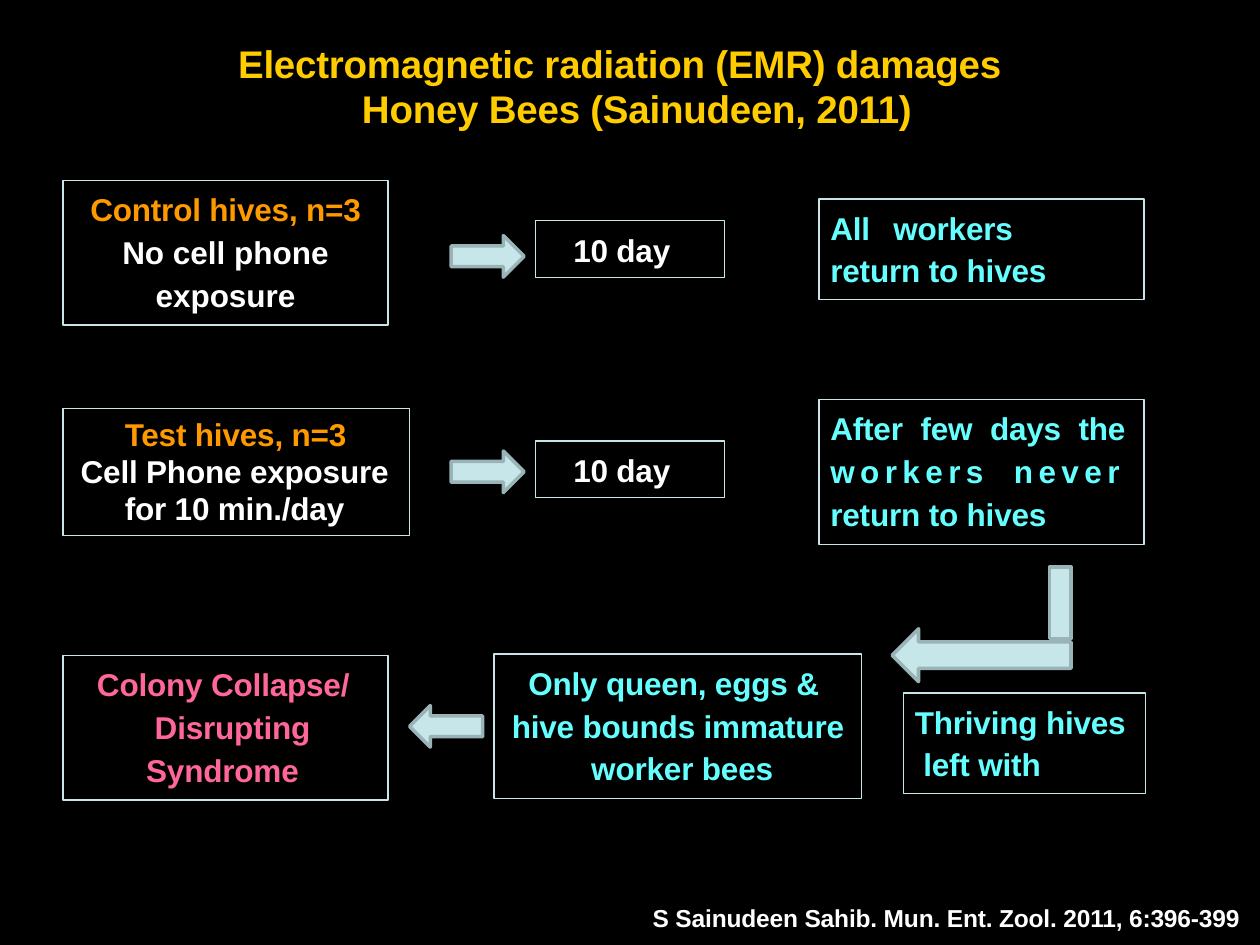
"""Builds a flow slide on honey bee hives exposed to electromagnetic radiation."""
from dataclasses import dataclass

from lxml import etree
from pptx import Presentation
from pptx import util as u
from pptx.dml.color import RGBColor
from pptx.enum import shapes, text
from pptx.oxml.ns import qn

BLACK = RGBColor(0x00, 0x00, 0x00)
WHITE = RGBColor(0xFF, 0xFF, 0xFF)
GOLD = RGBColor(0xFF, 0xCC, 0x00)
ORANGE = RGBColor(0xFF, 0x99, 0x00)
CYAN = RGBColor(0x66, 0xFF, 0xFF)
PINK = RGBColor(0xFF, 0x66, 0x99)
ICE = RGBColor(0xC6, 0xE6, 0xE9)
STEEL = RGBColor(0x9A, 0xB3, 0xB6)

LEFT, CENTER, JUSTIFY = (text.PP_ALIGN.LEFT, text.PP_ALIGN.CENTER,
                         text.PP_ALIGN.JUSTIFY)
KIND = shapes.MSO_SHAPE


@dataclass
class Span:
    words: str
    color: RGBColor
    spacing: float = -0.1


@dataclass
class Para:
    spans: list[Span]
    margin: float = 0
    indent: float = 0
    align: text.PP_ALIGN = LEFT
    leading: float | u.Pt = 1.13
    before: float = 3
    tab: float = 0


@dataclass
class Box:
    at: tuple[float, float, float, float]
    paras: list[Para]
    top: float = 0.04
    right: float = 0


@dataclass
class Block:
    kind: shapes.MSO_SHAPE
    at: tuple[float, float, float, float]


def ten_days(top: float) -> Box:
    """Return the exposure period box at the given height."""
    para = Para([Span("10 day", WHITE)], 0.3, leading=1.0, before=5.9)
    return Box((4.25, top, 1.5, 0.45), [para], 0.08)


BOXES = [
    Box((0.5, 1.43, 2.58, 1.15),
        [Para([Span("Control hives, n=3\v", ORANGE),
               Span("No cell phone\vexposure", WHITE, 0)], align=CENTER)]),
    ten_days(1.75),
    Box((6.5, 1.58, 2.58, 0.8),
        [Para([Span("All\tworkers\vreturn to hives", CYAN)], 0.09,
              leading=1.11, before=3.5, tab=0.61)], 0.05),
    Box((0.5, 3.24, 2.75, 1.01),
        [Para([Span("Test hives, n=3\v", ORANGE), Span("Cell Phone exposure", WHITE)],
              0.14, 0.35, leading=u.Pt(21), before=4.4),
         Para([Span("for 10 min./day", WHITE)], 0.49,
              leading=u.Pt(21.4), before=0)], 0.06),
    ten_days(3.5),
    Box((6.5, 3.17, 2.58, 1.15),
        [Para([Span("After few days the ", CYAN), Span("workers never ", CYAN, 3.1),
               Span("return to hives", CYAN)], 0.09, align=JUSTIFY)], right=0.15),
    Box((7.17, 5.5, 1.92, 0.8),
        [Para([Span("Thriving hives\v left with", CYAN)], 0.09,
              leading=1.11, before=3.5)], 0.05),
    Box((3.92, 5.19, 2.92, 1.15),
        [Para([Span("Only queen, eggs & \vhive bounds immature\v worker bees", CYAN)],
              align=CENTER)]),
    Box((0.5, 5.2, 2.58, 1.15),
        [Para([Span("Colony Collapse/\v Disrupting\vSyndrome", PINK)], 0.66, -0.39)]),
]

BLOCKS = [
    Block(KIND.RIGHT_ARROW, (3.58, 1.87, 0.58, 0.33)),
    Block(KIND.RIGHT_ARROW, (3.58, 3.58, 0.58, 0.33)),
    Block(KIND.RECTANGLE, (8.33, 4.5, 0.17, 0.57)),
    Block(KIND.LEFT_ARROW, (7.08, 4.99, 1.42, 0.42)),
    Block(KIND.LEFT_ARROW, (3.25, 5.6, 0.58, 0.33)),
]


def set_all(target, values: dict) -> None:
    """Set every named attribute on the target."""
    for name, value in values.items():
        setattr(target, name, value)


def write(tf, paras: list[Para], size: float, top: float = 0, right: float = 0) -> None:
    """Fill a text frame with formatted paragraphs."""
    set_all(tf, {"word_wrap": True, "auto_size": text.MSO_AUTO_SIZE.NONE,
                 "vertical_anchor": text.MSO_ANCHOR.TOP,
                 "margin_left": 0, "margin_top": u.Inches(top),
                 "margin_right": u.Inches(right), "margin_bottom": 0})
    for i, para in enumerate(paras):
        p = tf.add_paragraph() if i else tf.paragraphs[0]
        set_all(p, {"alignment": para.align, "line_spacing": para.leading,
                    "space_before": u.Pt(para.before)})
        ppr = p._p.get_or_add_pPr()
        ppr.set("marL", str(u.Inches(para.margin)))
        ppr.set("indent", str(u.Inches(para.indent)))
        if para.tab:
            tabs = etree.SubElement(ppr, qn("a:tabLst"))
            etree.SubElement(tabs, qn("a:tab"), pos=str(u.Inches(para.tab)), algn="l")
        for span in para.spans:
            for n, line in enumerate(span.words.split("\v")):
                if n:
                    p.add_line_break()
                if not line:
                    continue
                r = p.add_run()
                r.text = line
                set_all(r.font, {"name": "Arial", "size": u.Pt(size), "bold": True})
                r.font.color.rgb = span.color
                r._r.get_or_add_rPr().set("spc", str(round(span.spacing * 100)))


def add_block(s, block: Block, fill: RGBColor, line: RGBColor, width: float):
    """Add a filled and outlined preset shape."""
    sp = s.shapes.add_shape(block.kind, *map(u.Inches, block.at))
    sp.shadow.inherit = False
    sp.fill.solid()
    sp.fill.fore_color.rgb = fill
    sp.line.color.rgb = line
    sp.line.width = u.Pt(width)
    return sp


def main() -> None:
    """Build and save the slide."""
    prs = Presentation()
    prs.slide_width, prs.slide_height = u.Inches(10), u.Inches(7.5)
    s = prs.slides.add_slide(prs.slide_layouts[5])
    s.background.fill.solid()
    s.background.fill.fore_color.rgb = BLACK

    title = s.shapes.title
    set_all(title, {"left": u.Inches(1.88), "top": u.Inches(0.32),
                    "width": u.Inches(6.16), "height": u.Inches(0.72)})
    heading = "Electromagnetic radiation (EMR) damages\v Honey Bees (Sainudeen, 2011)"
    write(title.text_frame, [Para([Span(heading, GOLD)], 0.91, -0.9,
                                  leading=u.Pt(26), before=0)], 22)

    for box in BOXES:
        sp = add_block(s, Block(KIND.RECTANGLE, box.at), BLACK, ICE, 0.75)
        write(sp.text_frame, box.paras, 18, box.top, box.right)
    for block in BLOCKS:
        add_block(s, block, ICE, STEEL, 2)

    note = s.shapes.add_textbox(*map(u.Inches, (5.17, 7.17, 4.75, 0.25)))
    citation = "S Sainudeen Sahib. Mun. Ent. Zool. 2011, 6:396-399"
    write(note.text_frame, [Para([Span(citation, WHITE)], 0.01,
                                 leading=1.0, before=0)], 14)
    prs.save("out.pptx")


if __name__ == "__main__":
    main()
